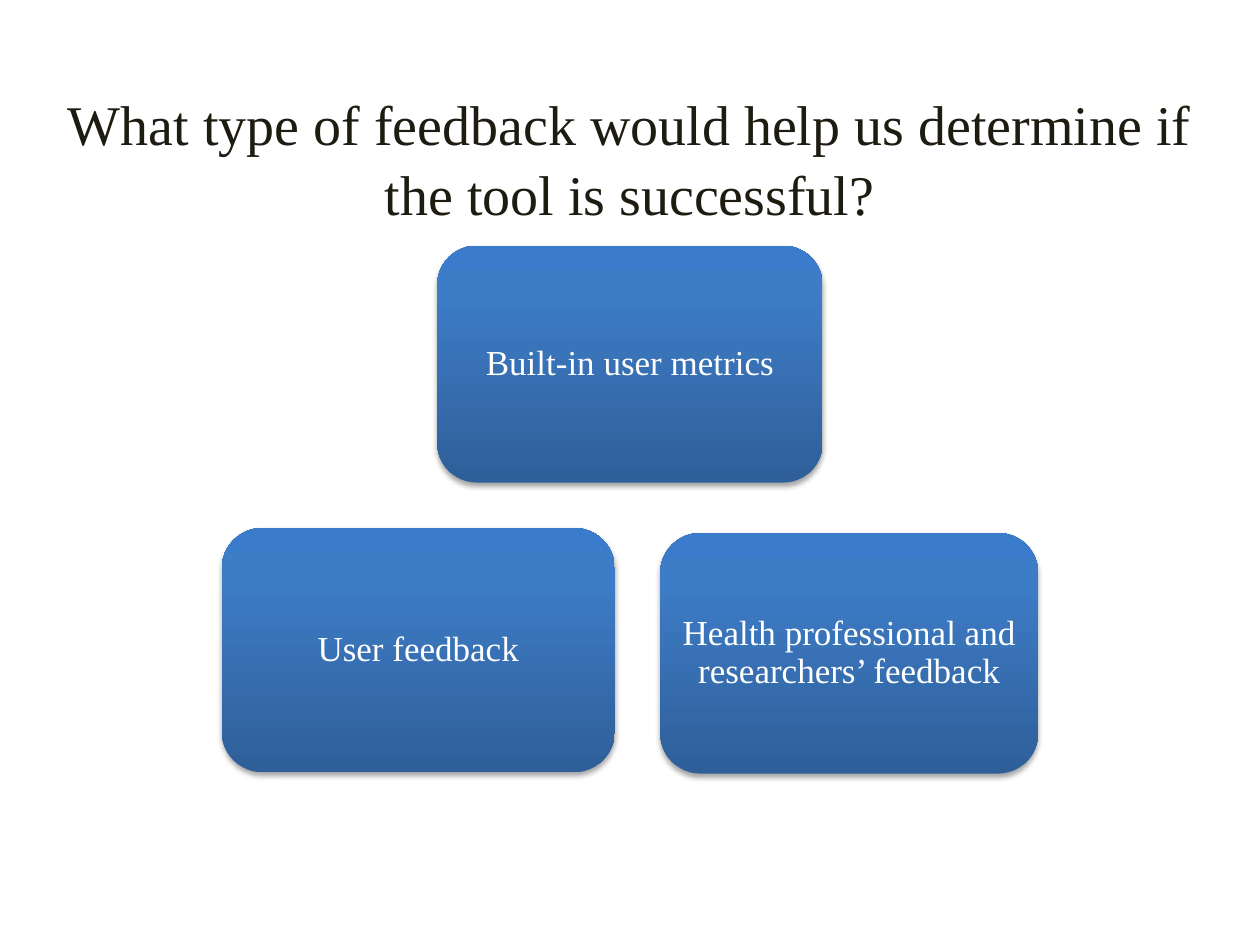
from lxml import etree
from pptx import Presentation
from pptx.dml.color import RGBColor
from pptx.enum.shapes import MSO_SHAPE
from pptx.enum.text import MSO_ANCHOR, PP_ALIGN
from pptx.oxml import parse_xml
from pptx.oxml.ns import nsdecls, qn
from pptx.util import Inches, Pt


def add_centered_text(frame, text, size, color, line_spacing):
    frame.word_wrap = True
    paragraph = frame.paragraphs[0]
    paragraph.alignment = PP_ALIGN.CENTER
    paragraph.line_spacing = line_spacing
    run = paragraph.add_run()
    run.text = text
    run.font.name = "Times New Roman"
    run.font.size = Pt(size)
    run.font.color.rgb = RGBColor.from_string(color)


presentation = Presentation()
presentation.slide_width = Inches(10)
presentation.slide_height = Inches(7.5)
slide = presentation.slides.add_slide(presentation.slide_layouts[6])

title = slide.shapes.add_textbox(Inches(0.43), Inches(0.6), Inches(9.14), Inches(1.02))
title.text_frame.margin_top = Inches(0.09)
add_centered_text(
    title.text_frame,
    "What type of feedback would help us determine if the tool is successful?",
    32, "1E1C11", 1.04,
)

feedback_types = [
    ("Built-in user metrics", 3.47, 1.95, 3.06, 1.88),
    ("User feedback", 1.76, 4.19, 3.12, 1.94),
    ("Health professional and researchers’ feedback", 5.24, 4.23, 3, 1.91),
]
gradient_stops = [(0, "2F5F99"), (80, "3D7CC7"), (100, "3A7CCB")]

for label, left, top, width, height in feedback_types:
    card = slide.shapes.add_shape(
        MSO_SHAPE.FLOWCHART_ALTERNATE_PROCESS,
        Inches(left), Inches(top), Inches(width), Inches(height),
    )
    card.line.fill.background()
    card.fill.gradient()
    card.fill.gradient_angle = 90
    stop_list = card._element.spPr.find(qn("a:gradFill")).find(qn("a:gsLst"))
    for stop in list(stop_list):
        stop_list.remove(stop)
    for position, color in gradient_stops:
        stop = etree.SubElement(stop_list, qn("a:gs"), pos=str(position * 1000))
        etree.SubElement(stop, qn("a:srgbClr"), val=color)

    card.shadow.inherit = False
    effects = card._element.spPr.find(qn("a:effectLst"))
    effects.append(parse_xml(
        f'<a:outerShdw {nsdecls("a")} blurRad="{Pt(3.1)}" dist="{Pt(1.8)}" '
        'dir="5400000" rotWithShape="0"><a:srgbClr val="000000">'
        '<a:alpha val="35000"/></a:srgbClr></a:outerShdw>'
    ))

    frame = card.text_frame
    frame.vertical_anchor = MSO_ANCHOR.MIDDLE
    frame.margin_left = frame.margin_right = Inches(0.08)
    frame.margin_top = frame.margin_bottom = Inches(0.08)
    add_centered_text(frame, label, 20, "FFFFFF", 0.9)

presentation.save("out.pptx")
